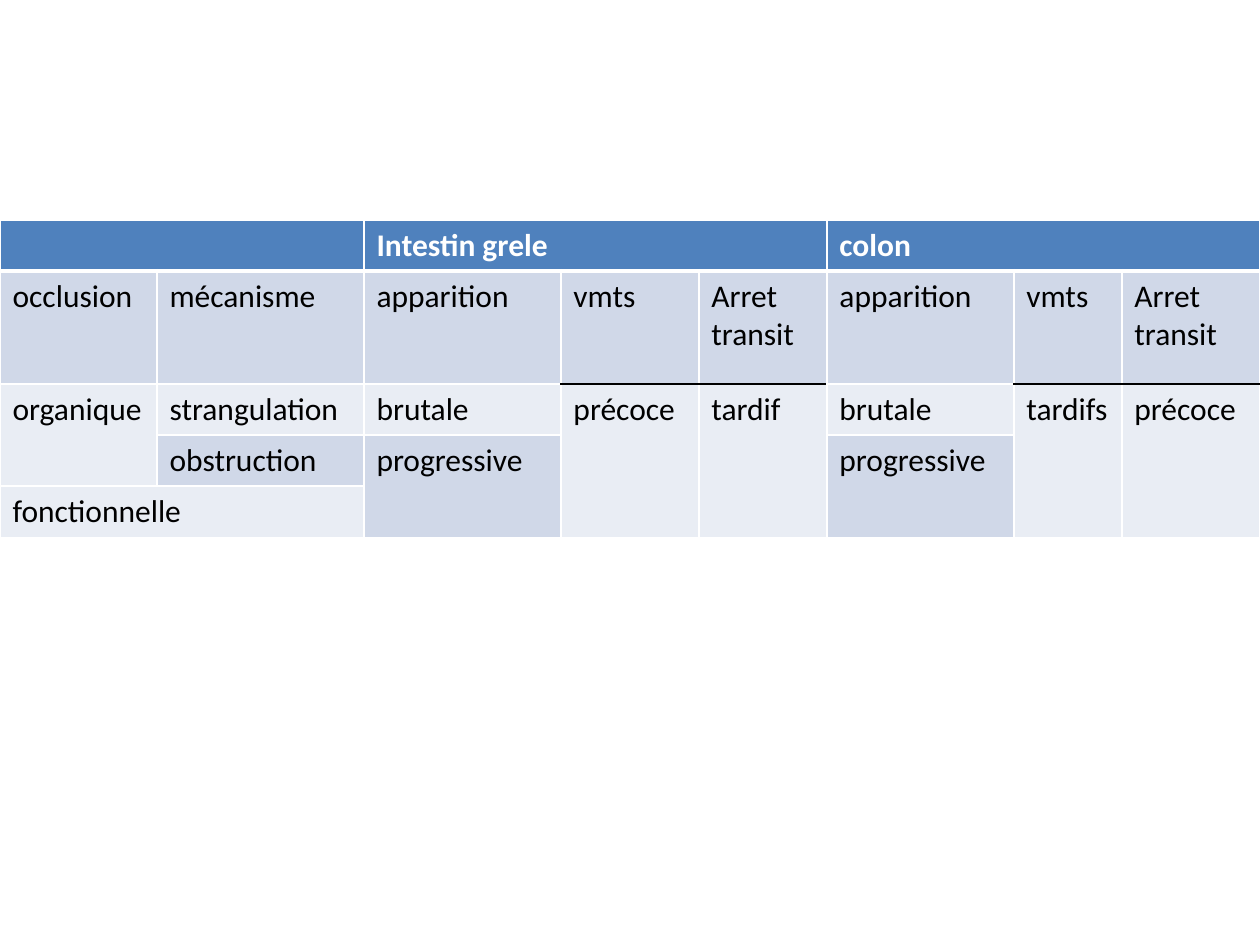
from lxml import etree
from pptx import Presentation
from pptx import util as u
from pptx.dml.color import RGBColor
from pptx.oxml.ns import qn

PX = 914400 // 126
HEADER, DARK, LIGHT = "4F81BD", "D0D8E8", "E9EDF4"
WHITE, BLACK = "FFFFFF", "000000"


def color(value):
    return RGBColor.from_string(value)


def add_border(cell, side, value, points):
    line = etree.SubElement(cell._tc.get_or_add_tcPr(), qn("a:" + side),
                            w=str(u.Pt(points)))
    fill = etree.SubElement(line, qn("a:solidFill"))
    etree.SubElement(fill, qn("a:srgbClr"), val=value)


presentation = Presentation()
presentation.slide_width = u.Inches(10)
presentation.slide_height = u.Inches(7.5)
slide = presentation.slides.add_slide(presentation.slide_layouts[6])

# Table grid
widths = [157, 207, 197, 138, 128, 187, 108, 138]
heights = [51, 113, 51, 51, 51]
table = slide.shapes.add_table(
    len(heights), len(widths), 0, 220 * PX,
    sum(widths) * PX, sum(heights) * PX).table
for column, width in zip(table.columns, widths):
    column.width = width * PX
for row, height in zip(table.rows, heights):
    row.height = height * PX

# Merged areas: first row, first column, last row, last column
for top, left, bottom, right in [
        (0, 0, 0, 1), (0, 2, 0, 4), (0, 5, 0, 7), (2, 0, 3, 0), (4, 0, 4, 1),
        (3, 2, 4, 2), (3, 5, 4, 5),
        (2, 3, 4, 3), (2, 4, 4, 4), (2, 6, 4, 6), (2, 7, 4, 7)]:
    table.cell(top, left).merge(table.cell(bottom, right))

# Wording and row fills
rows = [
    (HEADER, ["", "", "Intestin grele", "", "", "colon", "", ""]),
    (DARK, ["occlusion", "mécanisme", "apparition", "vmts", "Arret transit",
            "apparition", "vmts", "Arret transit"]),
    (LIGHT, ["organique", "strangulation", "brutale", "précoce", "tardif",
             "brutale", "tardifs", "précoce"]),
    (DARK, ["", "obstruction", "progressive", "", "", "progressive", "", ""]),
    (LIGHT, ["fonctionnelle", "", "", "", "", "", "", ""]),
]
ruled_columns = {3, 4, 6, 7}

for r, (fill, texts) in enumerate(rows):
    for c, words in enumerate(texts):
        cell = table.cell(r, c)

        # Thick rule under the header, black rule above the merged columns
        borders = {"lnL": (WHITE, 1), "lnR": (WHITE, 1),
                   "lnT": (WHITE, 1), "lnB": (WHITE, 1)}
        if r == 0:
            borders["lnB"] = (WHITE, 3)
        if r == 1:
            borders["lnT"] = (WHITE, 3)
        if c in ruled_columns and r in (1, 2):
            borders["lnB" if r == 1 else "lnT"] = (BLACK, 1)
        for side, (value, points) in borders.items():
            add_border(cell, side, value, points)

        cell.fill.solid()
        cell.fill.fore_color.rgb = color(
            LIGHT if c in ruled_columns and r > 1 else fill)

        cell.text = words
        font = cell.text_frame.paragraphs[0].font
        for name, value in {"name": "Calibri", "size": u.Pt(18),
                            "bold": r == 0}.items():
            setattr(font, name, value)
        font.color.rgb = color(WHITE if r == 0 else BLACK)
        for run in cell.text_frame.paragraphs[0].runs:
            for name, value in {"name": "Calibri", "size": u.Pt(18),
                                "bold": r == 0}.items():
                setattr(run.font, name, value)
            run.font.color.rgb = color(WHITE if r == 0 else BLACK)

presentation.save("out.pptx")
